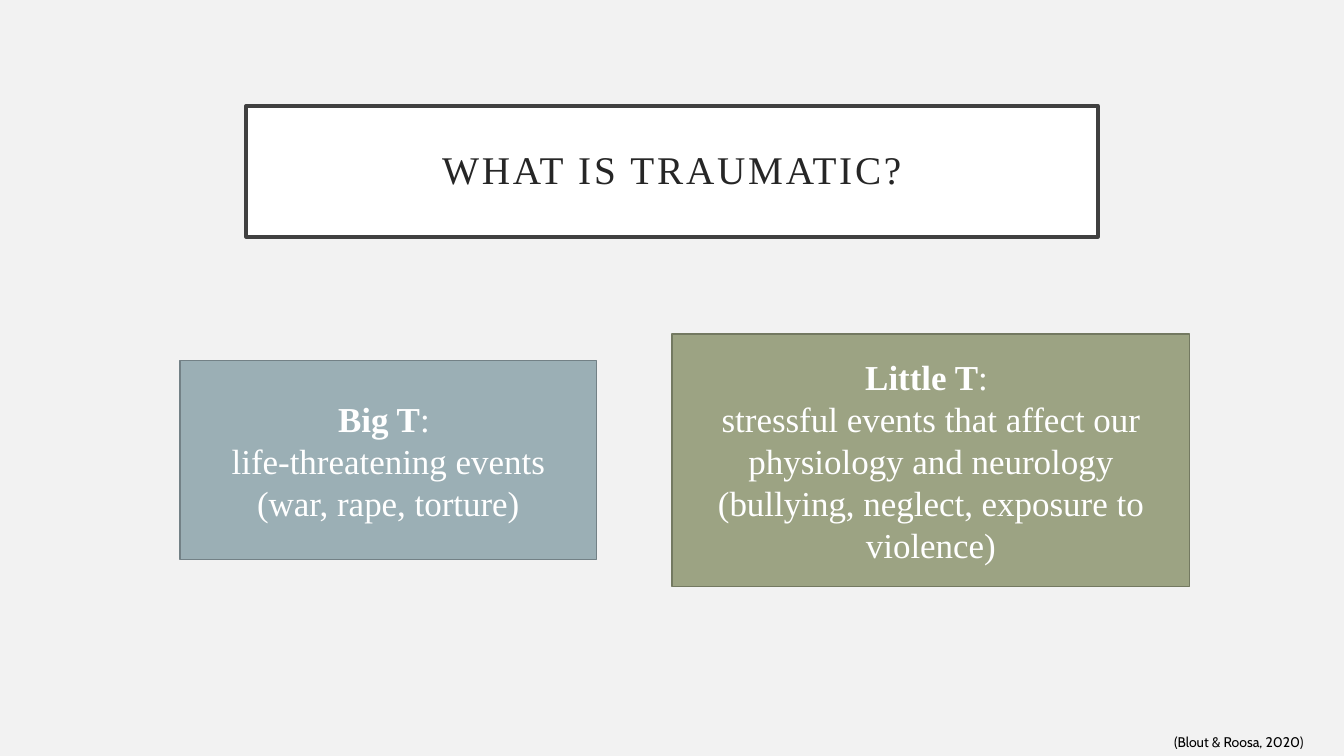
import pptx
import pptx.util
import pptx.dml.color
import pptx.enum.shapes
import pptx.enum.text

Pt = pptx.util.Pt
Align = pptx.enum.text.PP_ALIGN
Anchor = pptx.enum.text.MSO_ANCHOR

# Content
WIDE, HIGH = 960, 540
SERIF, SANS = "Times New Roman", "Cabin"
TITLE = "WHAT IS TRAUMATIC?"
CREDIT = "(Blout & Roosa, 2020)"
# head, lines, left, width, height, fill, edge
CARDS = [
    ("Big T", ["life-threatening events", "(war, rape, torture)"],
     128.7, 297.4, 142.3, "9BAFB5", "738186"),
    ("Little T", ["stressful events that affect our physiology and neurology",
                  "(bullying, neglect, exposure to violence)"],
     480.1, 369.6, 180.4, "9CA383", "737961"),
]
MID = 328.7  # shared centre line of the cards


def tint(code):
    return pptx.dml.color.RGBColor.from_string(code)


def paint(shape, fill, edge, width):
    shape.fill.solid()
    shape.fill.fore_color.rgb = tint(fill)
    shape.line.color.rgb = tint(edge)
    shape.line.width = Pt(width)


def place(shape, left, top, width, height):
    shape.left, shape.top = Pt(left), Pt(top)
    shape.width, shape.height = Pt(width), Pt(height)


def write(para, text, size, face, color, bold=False):
    run = para.add_run()
    run.text = text
    font = run.font
    font.size, font.name, font.bold = Pt(size), face, bold
    font.color.rgb = tint(color)
    return run


deck = pptx.Presentation()
deck.slide_width, deck.slide_height = Pt(WIDE), Pt(HIGH)
slide = deck.slides.add_slide(deck.slide_layouts[5])
slide.background.fill.solid()
slide.background.fill.fore_color.rgb = tint("F2F2F2")

# Title
title = slide.shapes.title
place(title, (WIDE - 608.4) / 2, 75.6, 608.4, 93.6)
paint(title, "FFFFFF", "404040", 2.5)
frame = title.text_frame
frame.word_wrap = True
frame.auto_size = pptx.enum.text.MSO_AUTO_SIZE.NONE
frame.vertical_anchor = Anchor.MIDDLE
frame.margin_left = frame.margin_right = Pt(14.4)
frame.margin_top = frame.margin_bottom = Pt(14.4)
para = frame.paragraphs[0]
para.alignment = Align.CENTER
para.line_spacing = 0.9
run = write(para, TITLE, 28, SERIF, "262626")
run.font._element.set("spc", "200")  # letter spacing of 2 pt

# Credit
note = slide.shapes.add_textbox(Pt(831.6), Pt(520.6), Pt(117.4), Pt(19.4))
note.text_frame.word_wrap = False
note.text_frame.auto_size = pptx.enum.text.MSO_AUTO_SIZE.SHAPE_TO_FIT_TEXT
write(note.text_frame.paragraphs[0], CREDIT, 10, SANS, "000000")

# Cards
for head, lines, left, width, height, fill, edge in CARDS:
    card = slide.shapes.add_shape(
        pptx.enum.shapes.MSO_SHAPE.RECTANGLE,
        Pt(left), Pt(MID - height / 2), Pt(width), Pt(height))
    card.shadow.inherit = False
    paint(card, fill, edge, 1)
    frame = card.text_frame
    frame.word_wrap = True
    frame.vertical_anchor = Anchor.MIDDLE
    para = frame.paragraphs[0]
    para.alignment = Align.CENTER
    write(para, head, 25, SERIF, "FFFFFF", True)
    write(para, ": ", 25, SERIF, "FFFFFF")
    for line in lines:
        para = frame.add_paragraph()
        para.alignment = Align.CENTER
        write(para, line, 25, SERIF, "FFFFFF")

deck.save("out.pptx")
